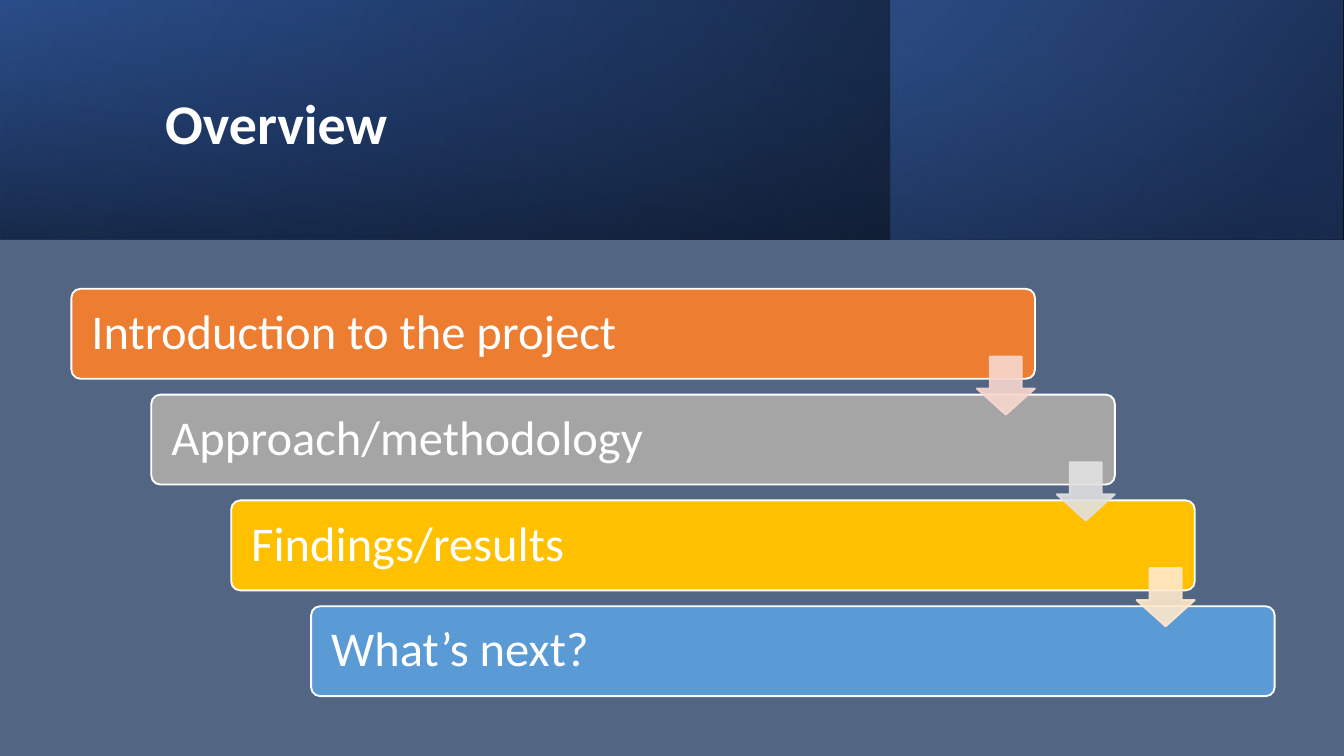
import pptx
import pptx.util
import pptx.dml.color
import pptx.enum.shapes
import pptx.enum.text
import pptx.oxml.ns
import lxml.etree

Cm = pptx.util.Cm
Pt = pptx.util.Pt
MSO_SHAPE = pptx.enum.shapes.MSO_SHAPE
qn = pptx.oxml.ns.qn


def paint(color, value, alpha=100):
    color.rgb = pptx.dml.color.RGBColor.from_string(value)
    if alpha < 100:
        node = color._xFill if hasattr(color, "_xFill") else color._parent
        clr = next(node.iter(qn("a:srgbClr")))
        lxml.etree.SubElement(clr, qn("a:alpha")).set("val", str(alpha * 1000))


def write(tf, text, size, bold=False):
    tf.word_wrap = True
    tf.vertical_anchor = pptx.enum.text.MSO_ANCHOR.MIDDLE
    tf.text = text
    p = tf.paragraphs[0]
    p.alignment = pptx.enum.text.PP_ALIGN.LEFT
    p.line_spacing = 0.9
    r = p.runs[0]
    r.font.name = "Calibri"
    r.font.size = Pt(size)
    r.font.bold = bold
    paint(r.font.color, "FFFFFF")


prs = pptx.Presentation()
prs.slide_width = Cm(25.4)
prs.slide_height = Cm(14.29)
s = prs.slides.add_slide(prs.slide_layouts[6])
s.background.fill.solid()
paint(s.background.fill.fore_color, "526582")

header_h = 4.53
bands = [
    (0, 0, 25.4, header_h, 0, 30, [(0, "000000", 96), (1, "2F5597", 100)]),
    (16.83, 0, 8.55, header_h, 0, 40, [(0.19, "203864", 68), (1, "4472C4", 48)]),
    (10.44, -10.44, header_h, 25.4, 270, 10, [(0.23, "2F5597", 16), (0.99, "000000", 45)]),
]
for x, y, w, h, turn, angle, stops in bands:
    sp = s.shapes.add_shape(MSO_SHAPE.RECTANGLE, Cm(x), Cm(y), Cm(w), Cm(h))
    sp.shadow.inherit = False
    sp.line.fill.background()
    sp.rotation = turn
    sp._element.spPr.find(qn("a:xfrm")).set("flipH", "1")
    sp.fill.gradient()
    sp.fill.gradient_angle = angle
    nodes = sp._element.spPr.iter(qn("a:gs"))
    for stop, node, (position, value, alpha) in zip(sp.fill.gradient_stops, nodes, stops):
        stop.position = position
        paint(stop.color, value)
        clr = node.find(qn("a:srgbClr"))
        lxml.etree.SubElement(clr, qn("a:alpha")).set("val", str(alpha * 1000))

title = s.shapes.add_textbox(Cm(2.87), Cm(0.74), Cm(20.24), Cm(3.28))
write(title.text_frame, "Overview", 30, True)

steps = [
    ("Introduction to the project", "ED7D31"),
    ("Approach/methodology", "A5A5A5"),
    ("Findings/results", "FFC000"),
    ("What’s next?", "5B9BD5"),
]
arrow_colors = ["F8D7CE", "E1E1E1", "FFE8CC"]
left, top, step_x, step_y = 1.35, 5.46, 1.51, 2
bar_w, bar_h, arrow = 18.21, 1.7, 1.1

for i, (text, value) in enumerate(steps):
    sp = s.shapes.add_shape(MSO_SHAPE.ROUNDED_RECTANGLE, Cm(left + i * step_x),
                            Cm(top + i * step_y), Cm(bar_w), Cm(bar_h))
    sp.shadow.inherit = False
    sp.adjustments[0] = 0.1
    sp.fill.solid()
    paint(sp.fill.fore_color, value)
    paint(sp.line.color, "FFFFFF")
    sp.line.width = Pt(1)
    tf = sp.text_frame
    tf.margin_left = tf.margin_right = Cm(0.33)
    write(tf, text, 26)

for i, value in enumerate(arrow_colors):
    sp = s.shapes.add_shape(MSO_SHAPE.DOWN_ARROW, Cm(left + bar_w - arrow + i * step_x),
                            Cm(top + 1.28 + i * step_y), Cm(arrow), Cm(arrow))
    sp.shadow.inherit = False
    sp.adjustments[0] = 0.55
    sp.adjustments[1] = 0.45
    sp.fill.solid()
    paint(sp.fill.fore_color, value)
    paint(sp.line.color, value)
    sp.line.width = Pt(1)
    for clr in sp._element.spPr.iter(qn("a:srgbClr")):
        lxml.etree.SubElement(clr, qn("a:alpha")).set("val", "90000")

prs.save("out.pptx")
